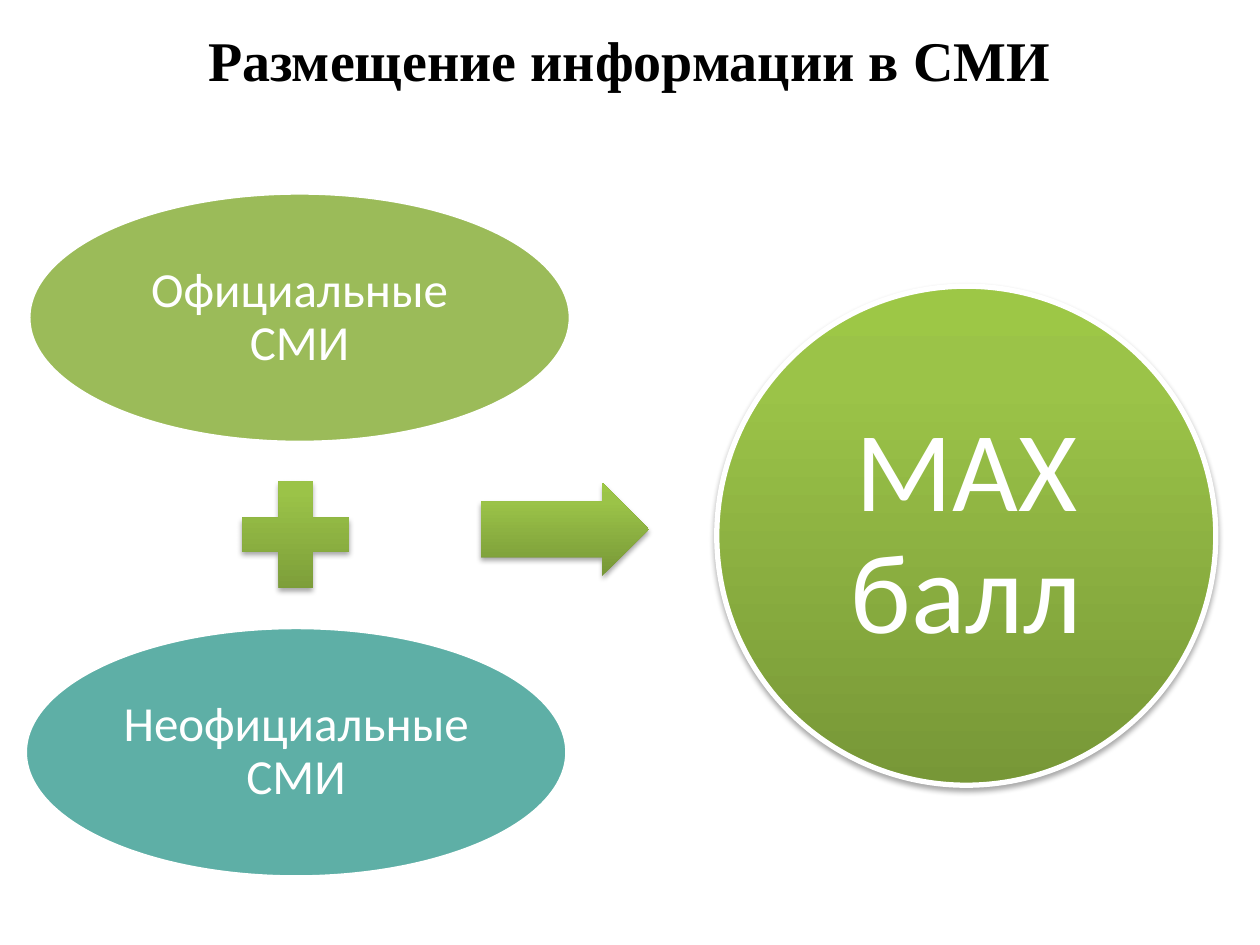
from dataclasses import dataclass
from typing import Optional

from lxml import etree
from pptx import Presentation
from pptx import util as u
from pptx.dml.color import RGBColor
from pptx.enum import shapes, text
from pptx.oxml.ns import qn

SHAPE = shapes.MSO_SHAPE


@dataclass(frozen=True)
class Theme:
    white: str = "FFFFFF"
    black: str = "000000"
    green: str = "9BBB59"
    teal: str = "5EAFA6"
    gradient: tuple = ((0, "779737"), (80, "9BC348"), (100, "9DC746"))
    title_font: str = "Times New Roman"
    body_font: str = "Calibri"
    title_size: int = 32
    media_size: int = 28
    result_size: int = 65


THEME = Theme()


@dataclass(frozen=True)
class Figure:
    """A diagram part, in centimetres; without a fill it gets the gradient and shadow."""
    kind: SHAPE
    left: float
    top: float
    width: float
    height: float
    fill: Optional[str] = None
    outline: float = 0
    label: str = ""
    size: int = 0
    inset: float = 0
    adjustments: tuple = ()


MEDIA_WIDTH, MEDIA_HEIGHT = 10.92, 5.03
RESULT_DIAMETER = 10.06
PLUS_SIDE = 2.92

FIGURES = (
    Figure(SHAPE.OVAL, 0.58, 3.89, MEDIA_WIDTH, MEDIA_HEIGHT, THEME.green, 2,
           "Официальные СМИ", THEME.media_size, 0.1),
    Figure(SHAPE.MATH_PLUS, 4.5, 9.32, PLUS_SIDE, PLUS_SIDE),
    Figure(SHAPE.OVAL, 0.51, 12.65, MEDIA_WIDTH, MEDIA_HEIGHT, THEME.teal, 2,
           "Неофициальные СМИ", THEME.media_size, 0.1),
    Figure(SHAPE.RIGHT_ARROW, 9.7, 9.73, 3.38, 1.88, adjustments=(0.6, 0.5)),
    Figure(SHAPE.OVAL, 14.45, 5.77, RESULT_DIAMETER, RESULT_DIAMETER, outline=3,
           label="MAX балл", size=THEME.result_size, inset=0.23),
)


def add_colour(parent, colour: str):
    return etree.SubElement(parent, qn("a:srgbClr"), val=colour)


def apply_gradient(shape) -> None:
    shape.fill.gradient()
    shape.fill.gradient_angle = 90
    stops = shape.element.spPr.find(".//" + qn("a:gsLst"))
    for stop in list(stops):
        stops.remove(stop)
    for position, colour in THEME.gradient:
        add_colour(etree.SubElement(stops, qn("a:gs"), pos=str(position * 1000)), colour)


def apply_shadow(shape) -> None:
    effects = shape.element.spPr.find(qn("a:effectLst"))
    shadow = etree.SubElement(effects, qn("a:outerShdw"), blurRad=str(u.Pt(3.1)),
                              dist=str(u.Pt(1.8)), dir="5400000", rotWithShape="0")
    etree.SubElement(add_colour(shadow, THEME.black), qn("a:alpha"), val="35000")


def write(frame, wording: str, font_name: str, size: int, colour: str,
          bold: bool = False, spacing: float = 1.0) -> None:
    frame.word_wrap = True
    frame.text = wording
    paragraph = frame.paragraphs[0]
    paragraph.alignment = text.PP_ALIGN.CENTER
    paragraph.line_spacing = spacing
    font = paragraph.runs[0].font
    font.name, font.size, font.bold = font_name, u.Pt(size), bold
    font.color.rgb = RGBColor.from_string(colour)


def draw_figure(slide, figure: Figure) -> None:
    shape = slide.shapes.add_shape(
        figure.kind, u.Cm(figure.left), u.Cm(figure.top),
        u.Cm(figure.width), u.Cm(figure.height))
    for index, value in enumerate(figure.adjustments):
        shape.adjustments[index] = value
    shape.shadow.inherit = False
    if figure.fill:
        shape.fill.solid()
        shape.fill.fore_color.rgb = RGBColor.from_string(figure.fill)
    else:
        apply_gradient(shape)
        apply_shadow(shape)
    if figure.outline:
        shape.line.color.rgb = RGBColor.from_string(THEME.white)
        shape.line.width = u.Pt(figure.outline)
    else:
        shape.line.fill.background()
    if figure.label:
        frame = shape.text_frame
        frame.margin_left = frame.margin_right = u.Cm(figure.inset)
        frame.margin_top = frame.margin_bottom = u.Cm(figure.inset)
        frame.vertical_anchor = text.MSO_ANCHOR.MIDDLE
        write(frame, figure.label, THEME.body_font, figure.size, THEME.white, spacing=0.9)


def main() -> None:
    deck = Presentation()
    deck.slide_width, deck.slide_height = u.Cm(25.4), u.Cm(19.05)
    slide = deck.slides.add_slide(deck.slide_layouts[6])
    title = slide.shapes.add_textbox(u.Cm(0.89), u.Cm(0.38), u.Cm(23.6), u.Cm(1.63))
    write(title.text_frame, "Размещение информации в СМИ", THEME.title_font,
          THEME.title_size, THEME.black, bold=True)
    title.text_frame.auto_size = text.MSO_AUTO_SIZE.SHAPE_TO_FIT_TEXT
    for figure in FIGURES:
        draw_figure(slide, figure)
    deck.save("out.pptx")


if __name__ == "__main__":
    main()
